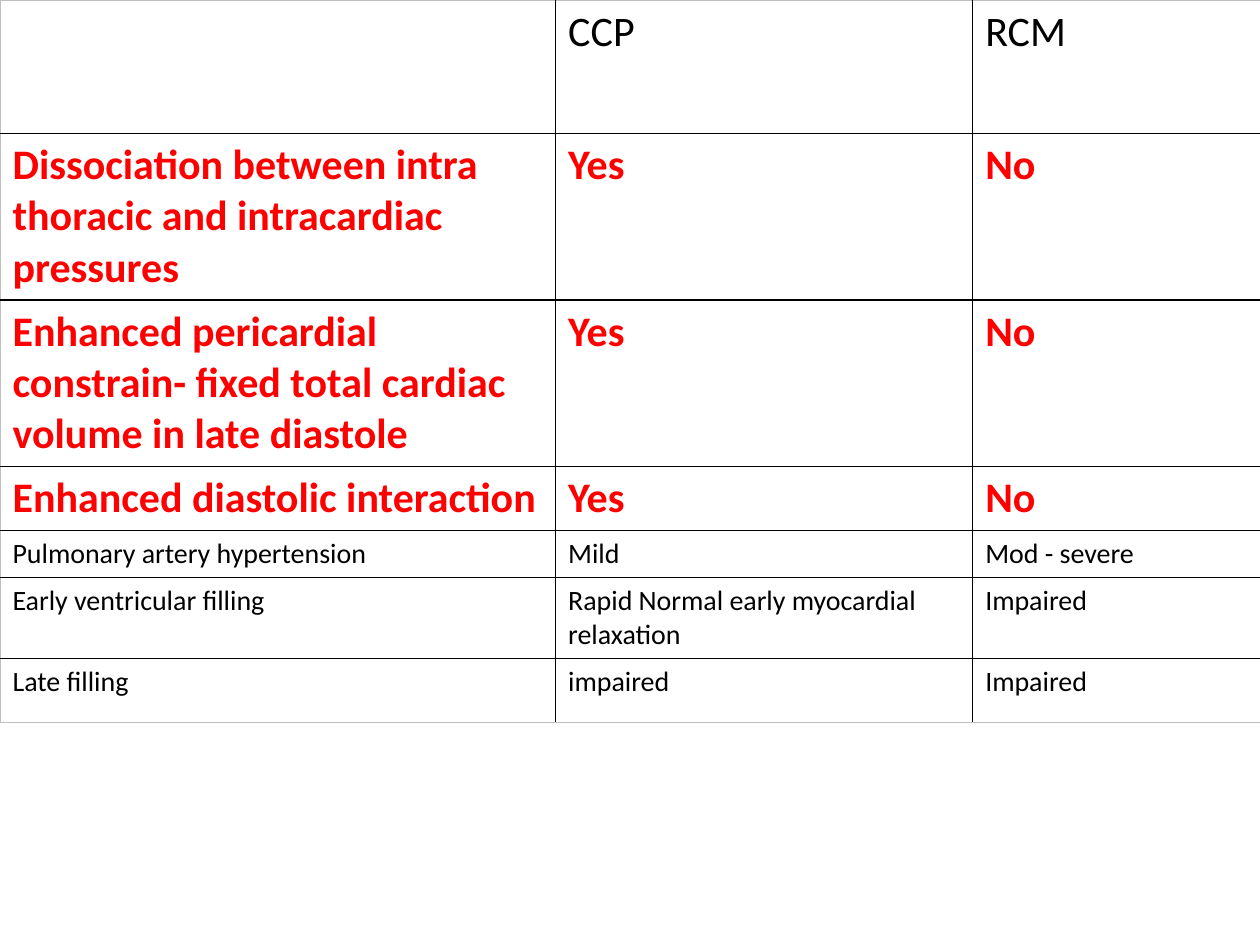
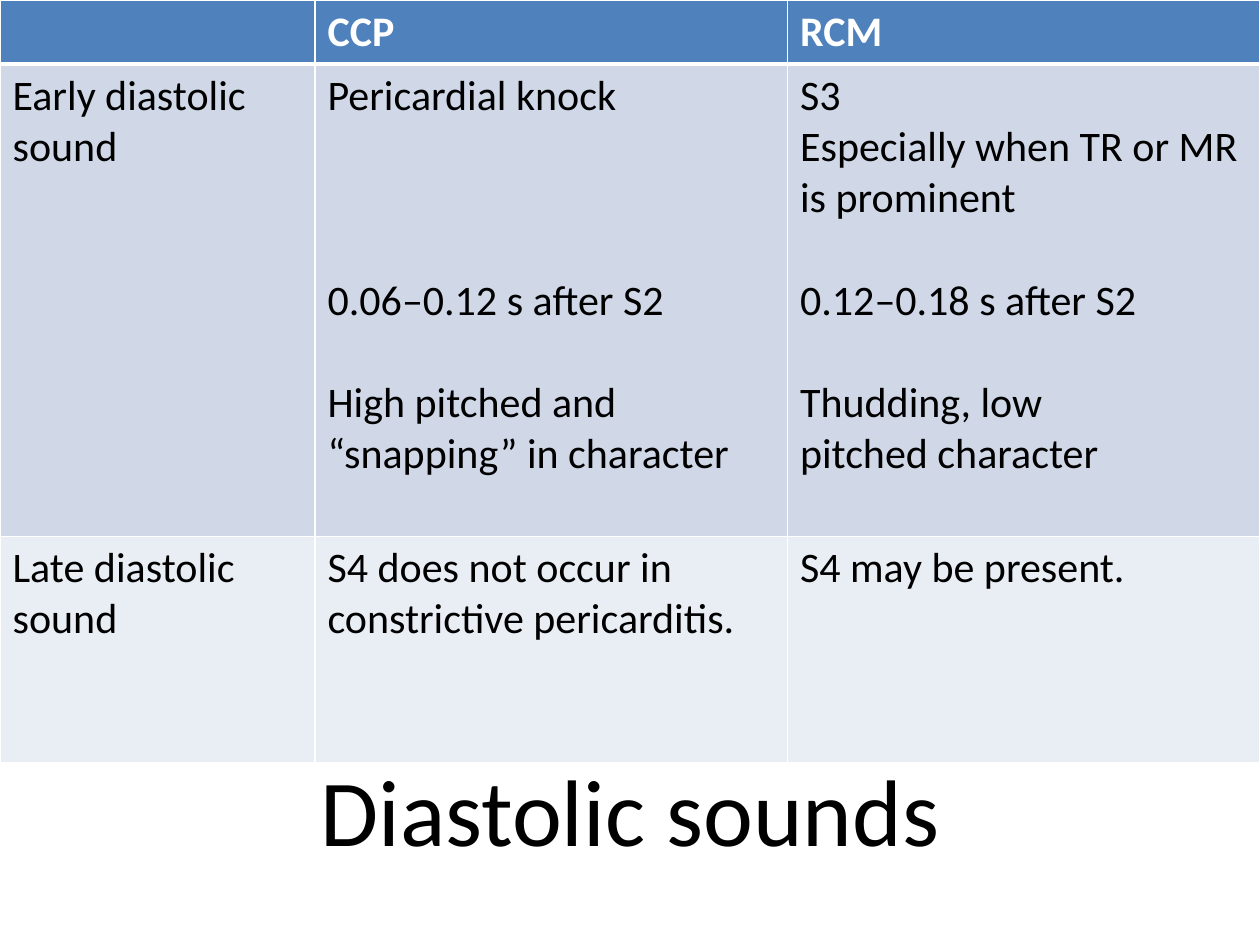
from lxml import etree
from pptx import Presentation
from pptx.dml.color import RGBColor
from pptx.enum.text import PP_ALIGN
from pptx.oxml.ns import qn
from pptx.util import Inches, Pt

CENTER = PP_ALIGN.CENTER
FONT = "Calibri"
BLACK, WHITE, RED = "000000", "FFFFFF", "FF0000"
GRAY, BLUE, BAND_DARK, BAND_LIGHT = "BFBFBF", "4F81BD", "D0D8E8", "E9EDF4"
LINE_HEIGHT = 29.3

PLAIN = {"size": 24, "color": BLACK, "bold": False, "fill": None}
KEY = {**PLAIN, "color": RED, "bold": True}
DETAIL = {**PLAIN, "size": 16}
HEADER = {**PLAIN, "color": WHITE, "bold": True, "fill": BLUE}
DARK = {**PLAIN, "fill": BAND_DARK}
LIGHT = {**PLAIN, "fill": BAND_LIGHT}

# Each row: height, style, cells. A cell is a text or a list of (blank lines above, text).
FILLING_COLUMNS = [4.41, 3.31, 2.28]
FILLING_ROWS = [
    (1.06, PLAIN, ["", "CCP", "RCM"]),
    (1.19, KEY, ["Dissociation between intra thoracic and intracardiac pressures", "Yes", "No"]),
    (1.23, KEY, ["Enhanced pericardial constrain- fixed total cardiac volume in late diastole", "Yes", "No"]),
    (0.51, KEY, ["Enhanced diastolic interaction", "Yes", "No"]),
    (0.33, DETAIL, ["Pulmonary artery hypertension", "Mild", "Mod - severe"]),
    (0.55, DETAIL, ["Early ventricular filling", "Rapid Normal early myocardial relaxation", "Impaired"]),
    (0.51, DETAIL, ["Late filling", "impaired", "Impaired"]),
]

SOUNDS_COLUMNS = [2.5, 3.75, 3.75]
SOUNDS_ROWS = [
    (0.45, HEADER, ["", "CCP", "RCM"]),
    (3.75, DARK, [
        "Early diastolic sound",
        [(0, "Pericardial knock"), (3, "0.06–0.12 s after S2"),
         (1, "High pitched and “snapping” in character")],
        [(0, "S3"), (0, "Especially when TR or MR is prominent"), (1, "0.12–0.18 s after S2"),
         (1, "Thudding, low"), (0, "pitched character")],
    ]),
    (1.8, LIGHT, ["Late diastolic sound", "S4 does not occur in constrictive pericarditis.",
                  "S4 may be present."]),
]


def rgb(color):
    return RGBColor.from_string(color)


def style_paragraph(paragraph, size, color, bold=False):
    for target in [paragraph, *paragraph.runs]:
        target.font.name = FONT
        target.font.size = Pt(size)
        target.font.bold = bold
        target.font.color.rgb = rgb(color)


def set_borders(cell, borders):
    properties = cell._tc.get_or_add_tcPr()
    for side, (color, width) in zip("LRTB", borders):
        line = etree.SubElement(properties, qn(f"a:ln{side}"), w=str(Pt(width)))
        solid = etree.SubElement(line, qn("a:solidFill"))
        etree.SubElement(solid, qn("a:srgbClr"), val=color)


def fill_cell(cell, content, style):
    lines = [(0, content)] if isinstance(content, str) else content
    cell.text_frame.text = "\n".join(text for _, text in lines)
    for paragraph, (gap, _) in zip(cell.text_frame.paragraphs, lines):
        paragraph.space_before = Pt(gap * LINE_HEIGHT)
        style_paragraph(paragraph, style["size"], style["color"], style["bold"])
    if style["fill"]:
        cell.fill.solid()
        cell.fill.fore_color.rgb = rgb(style["fill"])
    else:
        cell.fill.background()


def add_grid(slide, columns, rows, inner, outer, header_line):
    height = sum(row[0] for row in rows)
    frame = slide.shapes.add_table(len(rows), len(columns), 0, 0, Inches(10), Inches(height))
    table = frame.table
    table.first_row = table.horz_banding = False
    for column, width in zip(table.columns, columns):
        column.width = Inches(width)
    last_row, last_column = len(rows) - 1, len(columns) - 1
    for r, (row_height, style, contents) in enumerate(rows):
        table.rows[r].height = Inches(row_height)
        for c, content in enumerate(contents):
            cell = table.cell(r, c)
            top = outer if r == 0 else header_line if r == 1 else inner
            bottom = outer if r == last_row else header_line if r == 0 else inner
            left = outer if c == 0 else inner
            right = outer if c == last_column else inner
            set_borders(cell, (left, right, top, bottom))
            fill_cell(cell, content, style)


def add_title(slide, text):
    box = slide.shapes.add_textbox(0, Inches(5.92), Inches(10), Inches(1.01))
    box.text_frame.word_wrap = True
    box.text_frame.text = text
    paragraph = box.text_frame.paragraphs[0]
    paragraph.alignment = CENTER
    style_paragraph(paragraph, 54, BLACK)


def main():
    presentation = Presentation()
    presentation.slide_width, presentation.slide_height = Inches(10), Inches(7.5)
    blank = presentation.slide_layouts[6]

    filling = presentation.slides.add_slide(blank)
    add_grid(filling, FILLING_COLUMNS, FILLING_ROWS,
             inner=(BLACK, 1), outer=(GRAY, 0.5), header_line=(BLACK, 1))

    sounds = presentation.slides.add_slide(blank)
    add_grid(sounds, SOUNDS_COLUMNS, SOUNDS_ROWS,
             inner=(WHITE, 1), outer=(WHITE, 1), header_line=(WHITE, 3))
    add_title(sounds, "Diastolic sounds")

    presentation.save("out.pptx")


if __name__ == "__main__":
    main()
